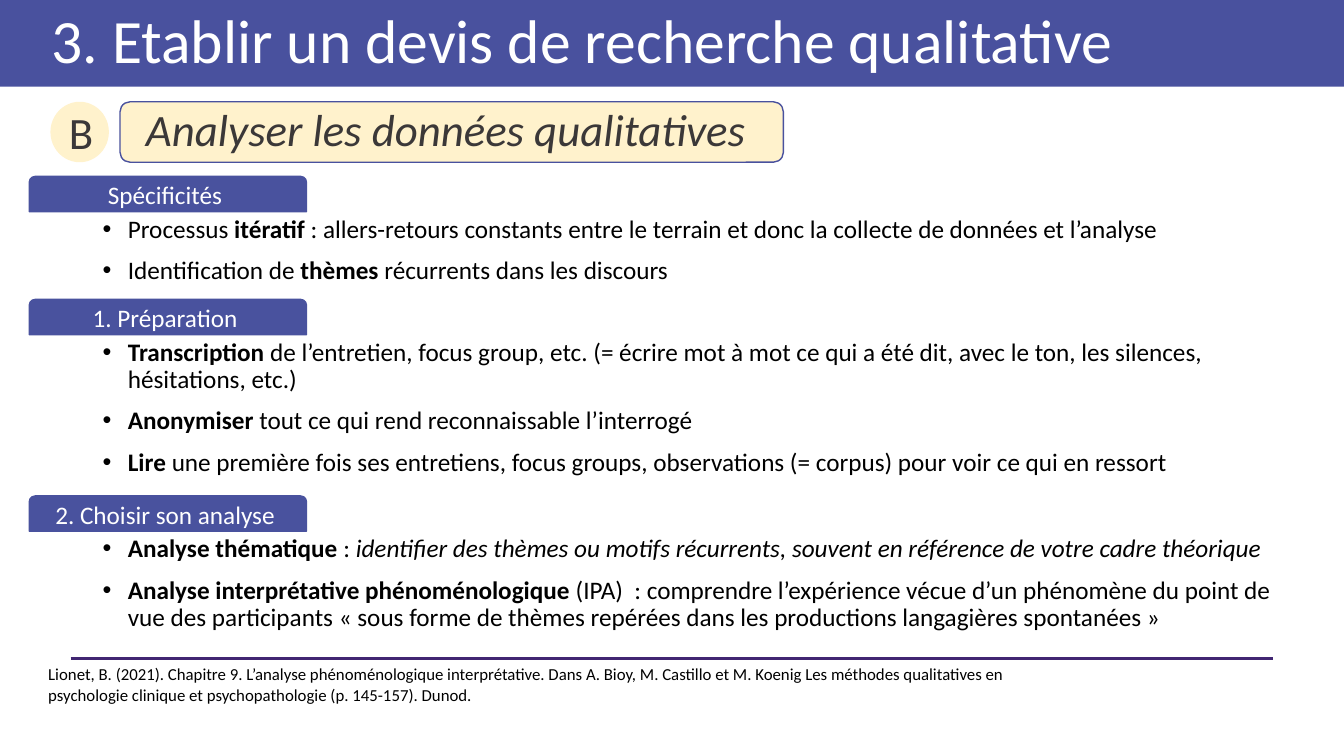
import pptx
import pptx.util
import pptx.dml.color
import pptx.enum.shapes
import pptx.enum.text
import pptx.oxml
import pptx.oxml.ns
from dataclasses import dataclass

Inches = pptx.util.Inches
Pt = pptx.util.Pt
MSO = pptx.enum.shapes.MSO_SHAPE
ALIGN = pptx.enum.text.PP_ALIGN
ANCHOR = pptx.enum.text.MSO_ANCHOR

# Content: each run is (text, style), with style "" plain, "b" bold, "i" italic
TITLE = "3. Etablir un devis de recherche qualitative"
LETTER = "B"
SUBTITLE = "Analyser les données qualitatives"
SECTIONS = [
    # heading, tab top, body width, body height, bullets
    ("Spécificités ", 1.75, 11.5, 0.86, [
        [("Processus", ""), (" itératif ", "b"),
         (": allers-retours constants entre le terrain et donc la collecte de données et l’analyse", "")],
        [("Identification de ", ""), ("thèmes", "b"), (" récurrents dans les discours", "")],
    ]),
    ("1. Préparation ", 2.97, 12.13, 1.6, [
        [("Transcription", "b"),
         (" de l’entretien, focus group, etc. (= écrire mot à mot ce qui a été dit, "
          "avec le ton, les silences, hésitations, etc.)", "")],
        [("Anonymiser", "b"), (" tout ce qui rend reconnaissable l’interrogé", "")],
        [("Lire", "b"),
         (" une première fois ses entretiens, focus groups, observations (= corpus) "
          "pour voir ce qui en ressort", "")],
    ]),
    ("2. Choisir son analyse ", 4.92, 12.13, 1.23, [
        [("Analyse thématique ", "b"), (": ", ""),
         ("identifier des thèmes ou motifs récurrents, souvent en référence de votre cadre théorique", "i")],
        [("Analyse interprétative phénoménologique ", "b"),
         ("(IPA)  : comprendre l’expérience vécue d’un phénomène du point de vue des participants "
          "« sous forme de thèmes repérées dans les productions langagières spontanées »", "")],
    ]),
]
REFERENCE = ("Lionet, B. (2021). Chapitre 9. L’analyse phénoménologique interprétative. "
             "Dans A. Bioy, M. Castillo et M. Koenig Les méthodes qualitatives en psychologie "
             "clinique et psychopathologie (p. 145-157). Dunod.")


@dataclass(frozen=True)
class Theme:
    font: str = "Calibri"
    band: str = "49519E"
    tab: str = "49529E"
    cream: str = "FFF2CC"
    rule: str = "412672"
    dark: str = "3B3838"
    white: str = "FFFFFF"
    black: str = "000000"
    title_size: int = 44
    subtitle_size: int = 32
    body_size: int = 18
    reference_size: int = 12


theme = Theme()


def rgb(color):
    return pptx.dml.color.RGBColor.from_string(color)


def set_font(font, size, color, style=""):
    font.name = theme.font
    font.size = Pt(size)
    font.color.rgb = rgb(color)
    font.bold = "b" in style
    font.italic = "i" in style


def write(tf, text, size, color, align=ALIGN.LEFT, style=""):
    tf.text = text
    p = tf.paragraphs[0]
    p.alignment = align
    set_font(p.runs[0].font, size, color, style)
    return p


def add_box(slide, shape_type, box, fill, line=None):
    sp = slide.shapes.add_shape(shape_type, *map(Inches, box))
    sp.shadow.inherit = False
    sp.fill.solid()
    sp.fill.fore_color.rgb = rgb(fill)
    if line:
        sp.line.color.rgb = rgb(line)
        sp.line.width = Pt(1)
    else:
        sp.line.fill.background()
    sp.text_frame.vertical_anchor = ANCHOR.MIDDLE
    return sp


def add_text(slide, box):
    tf = slide.shapes.add_textbox(*map(Inches, box)).text_frame
    tf.word_wrap = True
    return tf


def add_bullet(p, runs, first):
    pPr = p._p.get_or_add_pPr()
    pPr.set("marL", str(Inches(0.25)))
    pPr.set("indent", str(-Inches(0.25)))
    for tag, attr, value in (("a:buFont", "typeface", "Arial"), ("a:buChar", "char", "•")):
        bullet = pptx.oxml.parse_xml(f"<{tag} {pptx.oxml.ns.nsdecls('a')}/>")
        bullet.set(attr, value)
        pPr.append(bullet)
    p.line_spacing = 0.9
    p.space_before = Pt(0 if first else 10)
    for text, style in runs:
        r = p.add_run()
        r.text = text
        set_font(r.font, theme.body_size, theme.black, style)


def main():
    prs = pptx.Presentation()
    prs.slide_width, prs.slide_height = Inches(13.33), Inches(7.5)
    slide = prs.slides.add_slide(prs.slide_layouts[5])

    # Title band
    title = slide.shapes.title
    title.left, title.top, title.width, title.height = 0, 0, prs.slide_width, Inches(0.86)
    title.fill.solid()
    title.fill.fore_color.rgb = rgb(theme.band)
    tf = title.text_frame
    tf.word_wrap = True
    tf.auto_size = pptx.enum.text.MSO_AUTO_SIZE.NONE
    tf.vertical_anchor = ANCHOR.MIDDLE
    tf.margin_left = Inches(0.51)
    write(tf, TITLE, theme.title_size, theme.white).line_spacing = 0.9

    # Subtitle with its letter badge
    add_box(slide, MSO.ROUNDED_RECTANGLE, (1.19, 1.01, 6.58, 0.6), theme.cream, theme.band)
    write(add_text(slide, (1.35, 0.96, 6.24, 0.64)), SUBTITLE,
          theme.subtitle_size, theme.dark, style="i")
    badge = add_box(slide, MSO.OVAL, (0.5, 1.01, 0.58, 0.6), theme.cream)
    write(badge.text_frame, LETTER, theme.subtitle_size, theme.dark, ALIGN.CENTER)

    # Sections: a tab with its bullets right below
    tab_height = 0.35
    for heading, top, width, height, bullets in SECTIONS:
        tf = add_text(slide, (0.92, top + tab_height, width, height))
        for i, runs in enumerate(bullets):
            p = tf.add_paragraph() if i else tf.paragraphs[0]
            add_bullet(p, runs, i == 0)
        tab = add_box(slide, MSO.ROUND_2_SAME_RECTANGLE, (0.29, top, 2.75, tab_height),
                      theme.tab, theme.tab)
        write(tab.text_frame, heading, theme.body_size, theme.white, ALIGN.CENTER)

    # Rule and reference
    rule = slide.shapes.add_connector(pptx.enum.shapes.MSO_CONNECTOR.STRAIGHT,
                                      Inches(0.7), Inches(6.53), Inches(12.63), Inches(6.53))
    rule.line.color.rgb = rgb(theme.rule)
    rule.line.width = Pt(2.25)
    rule._element.spPr.append(
        pptx.oxml.parse_xml(f"<a:effectLst {pptx.oxml.ns.nsdecls('a')}/>"))
    write(add_text(slide, (0.38, 6.54, 10.39, 0.5)), REFERENCE,
          theme.reference_size, theme.black)

    prs.save("out.pptx")


if __name__ == "__main__":
    main()
